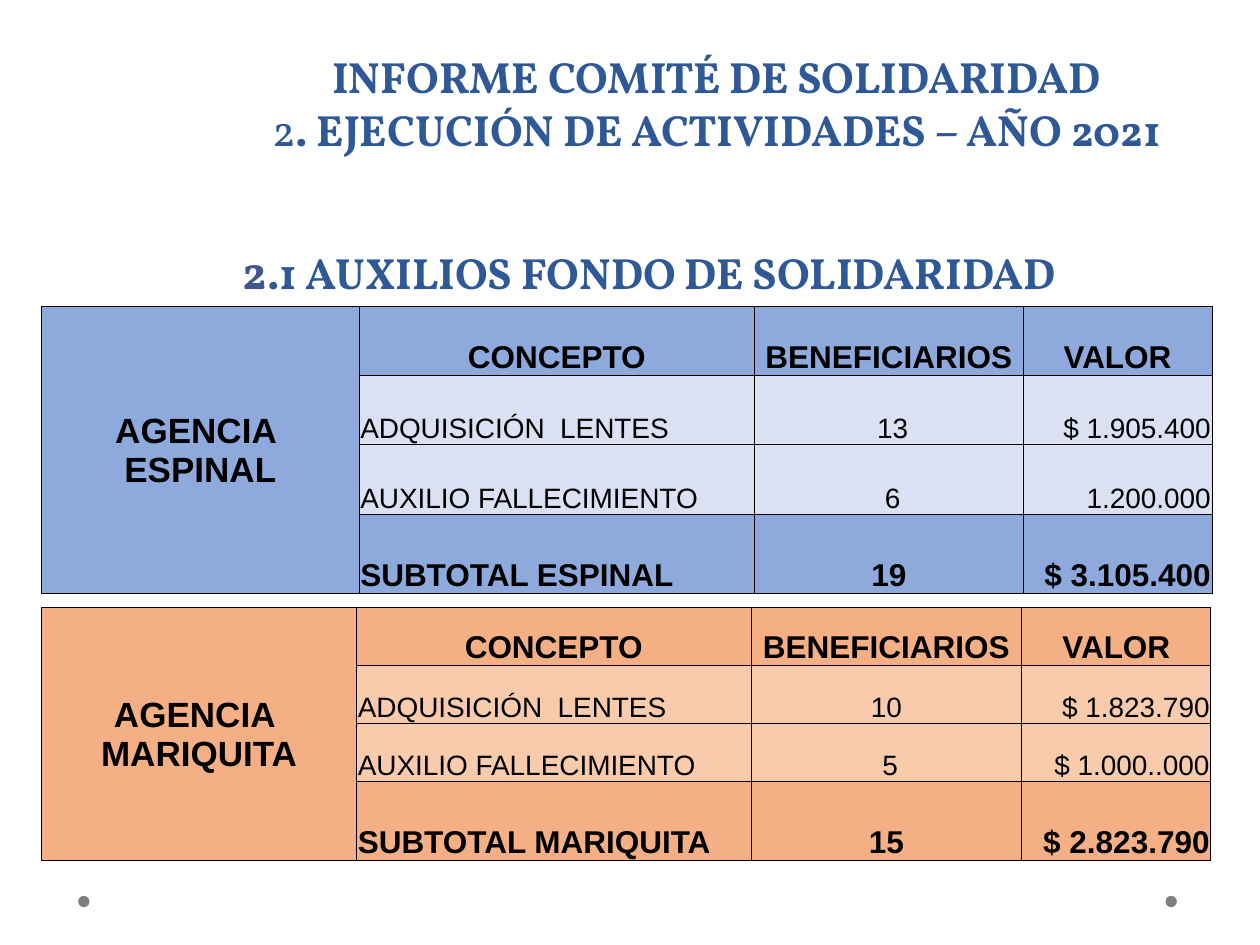
from lxml import etree
from pptx import Presentation
from pptx import util as u
from pptx.dml.color import RGBColor
from pptx.enum import shapes, text
from pptx.oxml.ns import qn

COLORS = {
    "title": "2F5897", "digit": "42568D", "ink": "000000", "dot": "7F7F7F",
    "blue": "8EA9DB", "pale blue": "D9E1F2",
    "orange": "F4B084", "pale orange": "F8CBAD",
}
ALIGN = text.PP_ALIGN
HEADS = ["CONCEPTO", "BENEFICIARIOS", "VALOR"]
SIDES = [ALIGN.LEFT, ALIGN.CENTER, ALIGN.RIGHT]


def color(name):
    return RGBColor.from_string(COLORS[name])


def add_run(para, words, tint="ink", **format):
    run = para.add_run()
    run.text = words
    for key, value in format.items():
        setattr(run.font, key, value)
    run.font.color.rgb = color(tint)


def place(shape, left, top, width, height):
    box = {"left": left, "top": top, "width": width, "height": height}
    for key, value in box.items():
        setattr(shape, key, u.Inches(value))


def set_frame(frame, anchor):
    """Prepare a wrapped frame and return its centred first paragraph."""
    form = {"word_wrap": True, "auto_size": text.MSO_AUTO_SIZE.NONE,
            "vertical_anchor": anchor}
    for key, value in form.items():
        setattr(frame, key, value)
    para = frame.paragraphs[0]
    para.alignment = ALIGN.CENTER
    return para


def add_title(slide):
    title = slide.shapes.title
    place(title, 1.22, 0.68, 9, 0.6)
    para = set_frame(title.text_frame, text.MSO_ANCHOR.BOTTOM)
    form = {"tint": "title", "name": "Vollkorn", "size": u.Pt(25)}
    add_run(para, "INFORME COMITÉ DE SOLIDARIDAD ", bold=True, **form)
    para.add_line_break()
    add_run(para, "2", bold=False, **form)
    add_run(para, ". EJECUCIÓN DE ACTIVIDADES – AÑO 2021 ", bold=True, **form)


def add_heading(slide):
    box = slide.shapes.add_textbox(
        *map(u.Inches, (1.06, 1.86, 8.11, 0.57)))
    para = set_frame(box.text_frame, text.MSO_ANCHOR.MIDDLE)
    form = {"name": "Vollkorn", "bold": True}
    add_run(para, " 2", "digit", size=u.Pt(27), **form)
    add_run(para, ".1 AUXILIOS FONDO DE SOLIDARIDAD", "title",
            size=u.Pt(25), **form)


def add_dot(slide, left):
    dot = slide.shapes.add_shape(
        shapes.MSO_SHAPE.OVAL, *map(u.Inches, (left, 7.11, 0.09, 0.09)))
    dot.shadow.inherit = False
    dot.fill.solid()
    dot.fill.fore_color.rgb = color("dot")
    dot.line.fill.background()


def set_cell(cell, fill):
    """Give a cell its thin black borders, fill and narrow margins."""
    props = cell._tc.get_or_add_tcPr()
    for tag in ("a:lnL", "a:lnR", "a:lnT", "a:lnB"):
        line = etree.SubElement(props, qn(tag), w=str(u.Pt(0.5)))
        solid = etree.SubElement(line, qn("a:solidFill"))
        etree.SubElement(solid, qn("a:srgbClr"), val=COLORS["ink"])
    cell.fill.solid()
    cell.fill.fore_color.rgb = color(fill)
    for side in ("left", "right", "top"):
        setattr(cell, "margin_" + side, u.Inches(0.01))
    cell.margin_bottom = 0
    cell.vertical_anchor = text.MSO_ANCHOR.BOTTOM


def write(para, words, align, size, bold):
    para.alignment = align
    add_run(para, words, name="Arial", size=u.Pt(size), bold=bold)


def add_agency(slide, name, tint, top, step, widths, rows):
    """Add an agency's table: a merged name cell beside its aid rows."""
    rows = [HEADS] + rows
    count = len(rows)
    table = slide.shapes.add_table(
        count, len(widths), u.Inches(0.33), u.Inches(top),
        u.Inches(sum(widths)), u.Inches(step * count)).table
    for col, width in zip(table.columns, widths):
        col.width = u.Inches(width)
    for r, row in enumerate(rows):
        table.rows[r].height = u.Inches(step)
        strong = r in (0, count - 1)
        fill = tint if strong else "pale " + tint
        set_cell(table.cell(r, 0), tint)
        for c, words in enumerate(row):
            cell = table.cell(r, c + 1)
            set_cell(cell, fill)
            align = SIDES[c] if r else ALIGN.CENTER
            write(cell.text_frame.paragraphs[0], words, align,
                  18 if strong else 16, strong)
    label = table.cell(0, 0)
    label.merge(table.cell(count - 1, 0))
    label.vertical_anchor = text.MSO_ANCHOR.MIDDLE
    frame = label.text_frame
    write(frame.paragraphs[0], "AGENCIA ", ALIGN.CENTER, 20, True)
    write(frame.add_paragraph(), name, ALIGN.CENTER, 20, True)


def main():
    deck = Presentation()
    deck.slide_width, deck.slide_height = u.Inches(10), u.Inches(7.5)
    slide = deck.slides.add_slide(deck.slide_layouts[5])
    for left in (9.25, 0.62):
        add_dot(slide, left)
    add_title(slide)
    add_heading(slide)
    add_agency(slide, "MARIQUITA", "orange", 4.82, 0.46,
               [2.5, 3.13, 2.15, 1.5], [
                   ["ADQUISICIÓN  LENTES", "10", "$ 1.823.790"],
                   ["AUXILIO FALLECIMIENTO", " 5", "$ 1.000..000"],
                   ["SUBTOTAL MARIQUITA", "15", "$ 2.823.790"]])
    add_agency(slide, "ESPINAL", "blue", 2.43, 0.55,
               [2.52, 3.14, 2.13, 1.5], [
                   ["ADQUISICIÓN  LENTES", " 13", "$ 1.905.400"],
                   ["AUXILIO FALLECIMIENTO", " 6", "1.200.000"],
                   ["SUBTOTAL ESPINAL", "19", "$ 3.105.400"]])
    deck.save("out.pptx")


if __name__ == "__main__":
    main()
